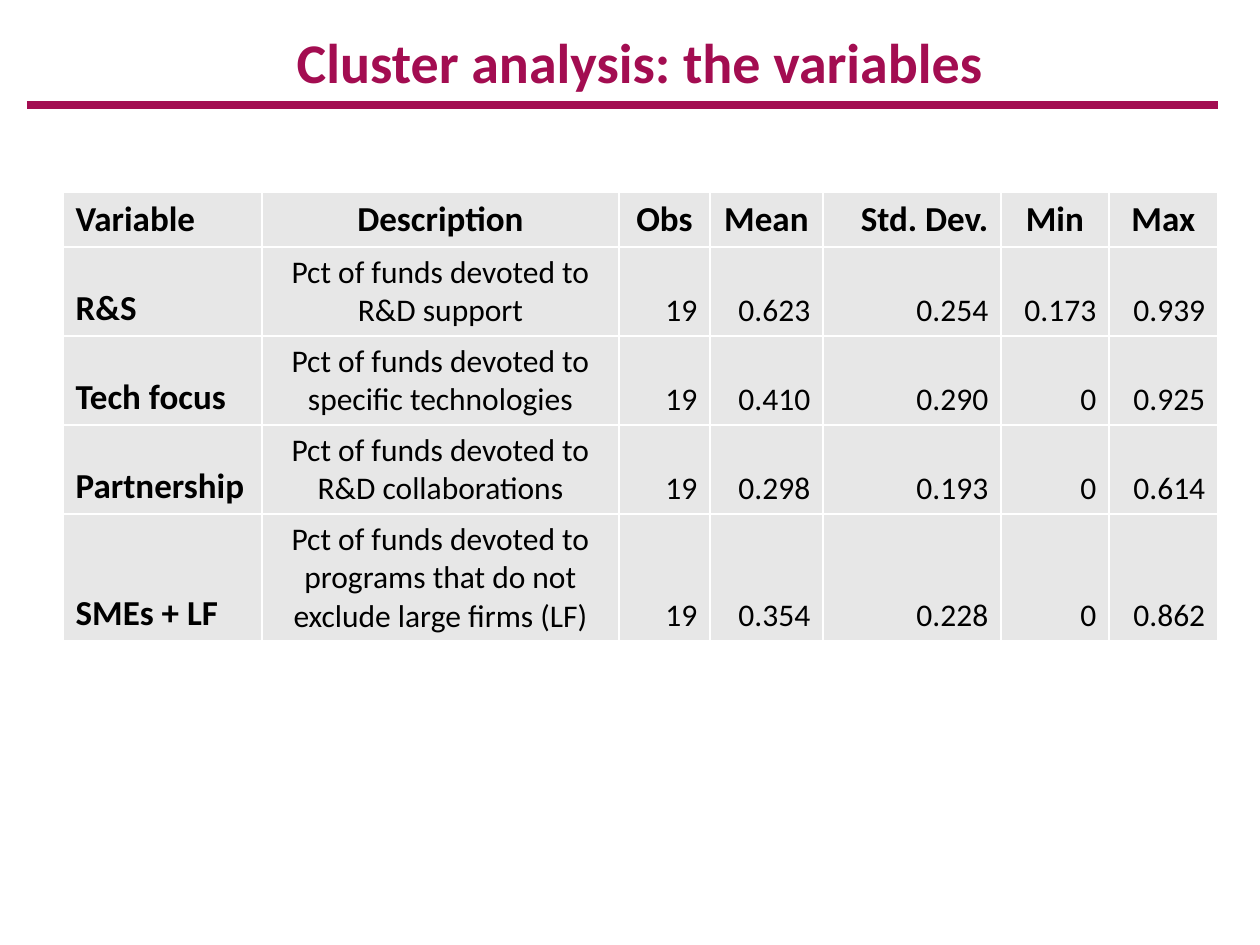
from lxml.etree import SubElement
from pptx import Presentation
from pptx.dml.color import RGBColor
from pptx.enum.shapes import MSO_CONNECTOR
from pptx.enum.text import MSO_ANCHOR, PP_ALIGN
from pptx.oxml.ns import qn
from pptx.util import Emu, Pt

PX = 914400 // 126
COLORS = {"accent": "A30D51", "cell": "E7E7E7", "border": "FFFFFF", "text": "000000"}
FONT = "Calibri"


def px(length):
    return Emu(length * PX)


def style(paragraph, size, color, bold, align):
    paragraph.alignment = align
    for run in paragraph.runs:
        run.font.name = FONT
        run.font.size = Pt(size)
        run.font.bold = bold
        run.font.color.rgb = RGBColor.from_string(COLORS[color])


deck = Presentation()
deck.slide_width, deck.slide_height = px(1260), px(945)
slide = deck.slides.add_slide(deck.slide_layouts[6])

title = slide.shapes.add_textbox(px(73), px(21), px(1134), px(158)).text_frame
title.word_wrap = True
title.vertical_anchor = MSO_ANCHOR.TOP
title.text = "Cluster analysis: the variables"
style(title.paragraphs[0], 32, "accent", True, PP_ALIGN.CENTER)

variables = [
    ["Variable", "Description", "Obs", "Mean", "Std. Dev.", "Min", "Max"],
    ["R&S", "Pct of funds devoted to R&D support", "19", "0.623", "0.254", "0.173", "0.939"],
    ["Tech focus", "Pct of funds devoted to specific technologies", "19", "0.410", "0.290", "0", "0.925"],
    ["Partnership", "Pct of funds devoted to R&D collaborations", "19", "0.298", "0.193", "0", "0.614"],
    ["SMEs + LF", "Pct of funds devoted to programs that do not exclude large firms (LF)",
     "19", "0.354", "0.228", "0", "0.862"],
]
column_widths = [199, 357, 91, 113, 178, 108, 109]
row_heights = [55, 89, 89, 89, 127]
left, center, right = PP_ALIGN.LEFT, PP_ALIGN.CENTER, PP_ALIGN.RIGHT
header_aligns = [left, center, center, center, right, center, center]
body_aligns = [left, center] + [right] * 5

summary = slide.shapes.add_table(
    len(row_heights), len(column_widths), px(63), px(192),
    px(sum(column_widths)), px(sum(row_heights))).table
for column, width in zip(summary.columns, column_widths):
    column.width = px(width)
for row, height in zip(summary.rows, row_heights):
    row.height = px(height)

for r, entries in enumerate(variables):
    aligns = body_aligns if r else header_aligns
    for c, entry in enumerate(entries):
        cell = summary.cell(r, c)
        cell.text = entry
        cell.vertical_anchor = MSO_ANCHOR.BOTTOM
        is_heading = r == 0 or c == 0
        style(cell.text_frame.paragraphs[0], 20 if is_heading else 18, "text", is_heading, aligns[c])
        properties = cell._tc.get_or_add_tcPr()
        for side in ("a:lnL", "a:lnR", "a:lnT", "a:lnB"):
            border = SubElement(properties, qn(side), w=str(Pt(1)))
            SubElement(SubElement(border, qn("a:solidFill")), qn("a:srgbClr"), val=COLORS["border"])
        cell.fill.solid()
        cell.fill.fore_color.rgb = RGBColor.from_string(COLORS["cell"])

title_rule = slide.shapes.add_connector(MSO_CONNECTOR.STRAIGHT, px(27), px(105), px(1218), px(105))
title_rule.line.color.rgb = RGBColor.from_string(COLORS["accent"])
title_rule.line.width = Pt(4.5)
SubElement(title_rule._element.spPr, qn("a:effectLst"))

deck.save("out.pptx")
